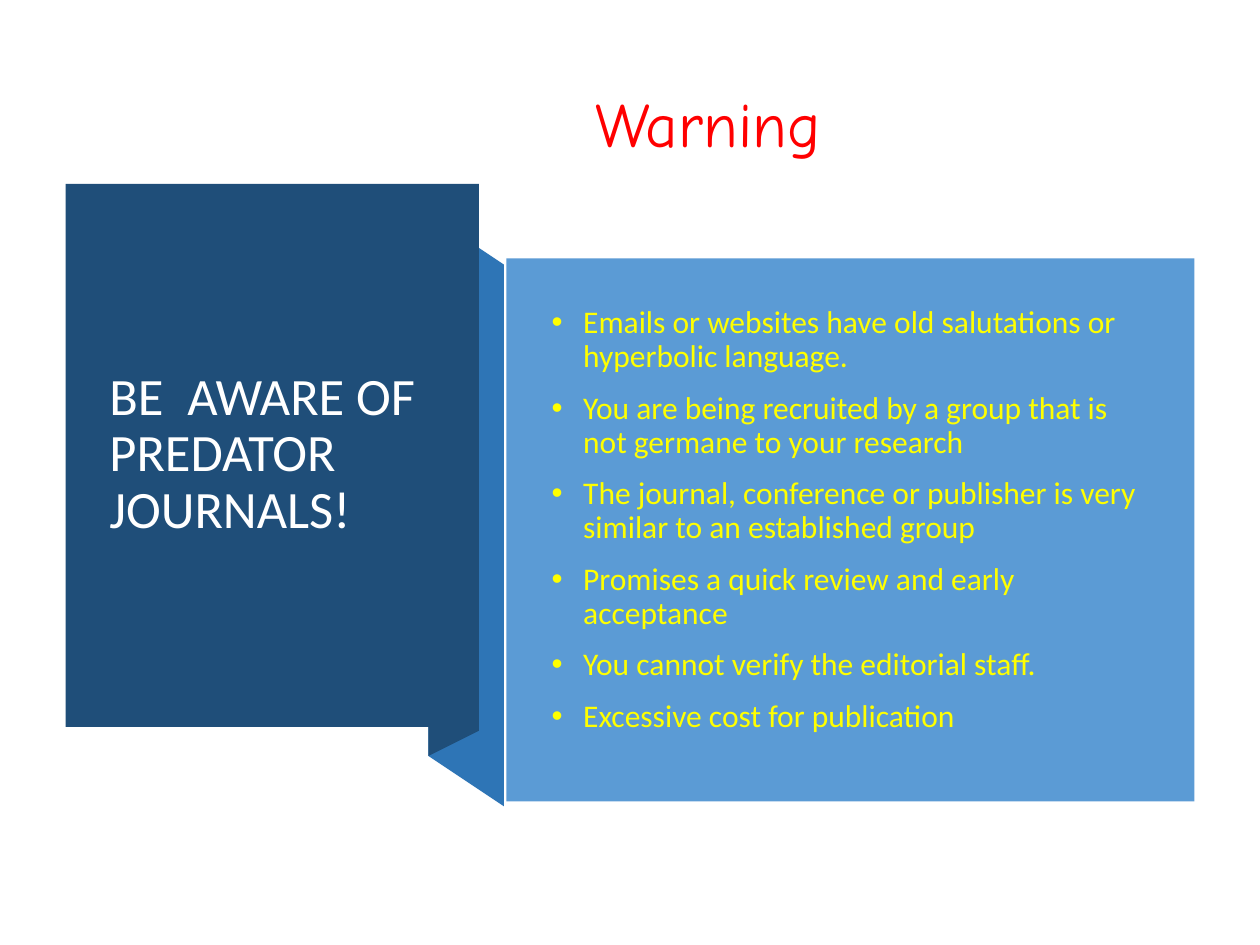
from lxml.etree import SubElement as Sub
from pptx import Presentation
from pptx.dml.color import RGBColor as Rgb
from pptx.enum.shapes import MSO_SHAPE as Kind
from pptx.enum.text import MSO_ANCHOR as Anchor, MSO_AUTO_SIZE as Fit
from pptx.oxml.ns import qn
from pptx.util import Inches, Pt

COLS, ROWS = 100, 75
UNIT = Inches(0.1)
NAVY, BLUE, SKY = "1F4E79", "2E75B6", "5B9BD5"
WHITE, GOLD, RED = "FFFFFF", "FFFF00", "FF0000"
SIGNS = [
    "Emails or websites have old salutations or hyperbolic language.",
    "You are being recruited by a group that is not germane to your research",
    "The journal, conference or publisher is very similar to an established group",
    "Promises a quick review and early acceptance",
    "You cannot verify the editorial staff.",
    "Excessive cost for publication",
]


def tint(hue):
    """Turn a hex string into a colour."""
    return Rgb.from_string(hue)


def grid(*cells):
    """Turn grid cells into slide lengths."""
    return [round(cell * UNIT) for cell in cells]


def paint(shape, hue):
    """Give a shape a flat fill with no line or shadow."""
    shape.shadow.inherit = False
    shape.fill.solid()
    shape.fill.fore_color.rgb = tint(hue)
    shape.line.fill.background()


def panel(slide, box, hue):
    """Draw a filled rectangle over the box."""
    paint(slide.shapes.add_shape(Kind.RECTANGLE, *grid(*box)), hue)


def outline(slide, points, hue):
    """Draw a filled polygon through grid points."""
    first, *rest = points
    form = slide.shapes.build_freeform(*first, scale=UNIT)
    form.add_line_segments(rest, close=True)
    paint(form.convert_to_shape(), hue)


def dot(para):
    """Add a hanging bullet to a paragraph."""
    props = para._p.get_or_add_pPr()
    props.set("marL", str(Inches(0.25)))
    props.set("indent", str(-Inches(0.25)))
    Sub(props, qn("a:buFont"), typeface="Arial")
    Sub(props, qn("a:buChar"), char="•")


def write(slide, box, lines, size, hue, font="Calibri", wrap=True,
          anchor=Anchor.MIDDLE, lead=0.9, gap=0, bullet=False, fit=Fit.NONE):
    """Place a text box with one paragraph for each line."""
    frame = slide.shapes.add_textbox(*grid(*box)).text_frame
    frame.word_wrap = wrap
    frame.auto_size = fit
    frame.vertical_anchor = anchor
    for i, line in enumerate(lines):
        para = frame.add_paragraph() if i else frame.paragraphs[0]
        para.line_spacing = lead
        if i:
            para.space_before = Pt(gap)
        if bullet:
            dot(para)
        run = para.add_run()
        run.text = line
        run.font.name = font
        run.font.size = Pt(size)
        run.font.color.rgb = tint(hue)


def fold(slide, box):
    """Draw the ribbon that runs behind the card to the list."""
    x, y, w, h = box
    end, base, rise = x + w, y + h, 3.8
    outline(slide, [(end, base), (x, base - rise), (x, y),
                    (end, y + rise)], BLUE)
    edge, lift = x + 4, 2.2
    outline(slide, [(edge, base - rise - lift), (x, base - rise),
                    (x, y), (edge, y - lift)], NAVY)


def card(slide, box):
    """Draw the dark card with its heading."""
    x, y, w, h = box
    panel(slide, box, NAVY)
    write(slide, (x + 2.5, y + 2.8, w - 5, h - 5.7),
          ["BE  AWARE OF PREDATOR JOURNALS!"], 30, WHITE)


def signs(slide, box):
    """Draw the light panel with its bullet list."""
    x, y, w, h = box
    panel(slide, box, SKY)
    write(slide, (x + 2.6, y + 3, w - 5.8, h - 7.5), SIGNS, 18, GOLD,
          gap=10, bullet=True)


def title(slide, box):
    """Write the warning above the panels."""
    write(slide, box, ["Warning"], 36, RED, font="Comic Neue", wrap=False,
          anchor=Anchor.TOP, lead=1.0, fit=Fit.SHAPE_TO_FIT_TEXT)


def main():
    """Build the slide and save it."""
    deck = Presentation()
    deck.slide_width, deck.slide_height = grid(COLS, ROWS)
    slide = deck.slides.add_slide(deck.slide_layouts[6])
    fold(slide, (34, 16.8, 6.2, 46.8))
    card(slide, (5.2, 14.6, 32.8, 43.1))
    signs(slide, (40.2, 20.5, 54.6, 43.1))
    title(slide, (46.3, 6.2, 21.7, 7.1))
    deck.save("out.pptx")


if __name__ == "__main__":
    main()
